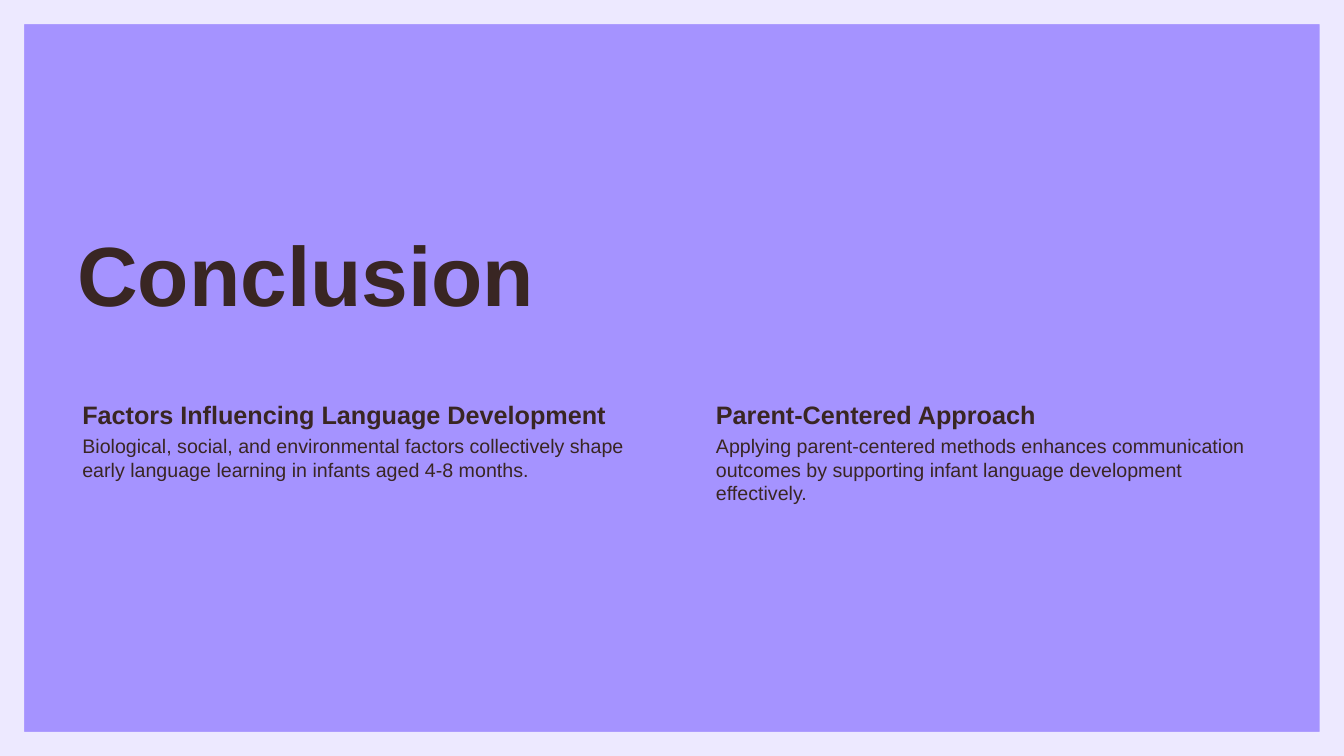
from dataclasses import dataclass

from pptx import Presentation
from pptx.dml.color import RGBColor
from pptx.enum.shapes import MSO_SHAPE
from pptx.enum.text import MSO_ANCHOR, PP_ALIGN
from pptx.slide import Slide
from pptx.util import Inches, Pt

WIDTH, HEIGHT = 13.33, 7.5
COLUMN, ROW = WIDTH / 14, HEIGHT / 21


@dataclass(frozen=True)
class Theme:
    font: str = "Arial"
    background: RGBColor = RGBColor(0xA5, 0x93, 0xFF)
    border: RGBColor = RGBColor(0xED, 0xE9, 0xFF)
    ink: RGBColor = RGBColor(0x39, 0x26, 0x23)
    title: int = 60
    heading: int = 18
    body: int = 14


@dataclass(frozen=True)
class TextStyle:
    size: int
    bold: bool
    insets: tuple[float, float, float, float]
    anchor: MSO_ANCHOR = MSO_ANCHOR.TOP
    line_spacing: float = 1.0


@dataclass(frozen=True)
class Area:
    column: float
    row: float
    columns: float
    rows: float


@dataclass(frozen=True)
class Takeaway:
    column: float
    heading: str
    body: str


THEME = Theme()
TITLE = TextStyle(THEME.title, True, (0.1, 0.05, 0.1, 0.05), MSO_ANCHOR.BOTTOM, 0.85)
HEADING = TextStyle(THEME.heading, True, (0.15, 0.03, 0.03, 0.03))
BODY = TextStyle(THEME.body, False, (0.15, 0.02, 0.02, 0.02))

TAKEAWAYS = [
    Takeaway(
        0.7,
        "Factors Influencing Language Development",
        "Biological, social, and environmental factors collectively shape "
        "early language learning in infants aged 4-8 months.",
    ),
    Takeaway(
        7.3,
        "Parent-Centered Approach",
        "Applying parent-centered methods enhances communication outcomes "
        "by supporting infant language development effectively.",
    ),
]


def add_border(s: Slide, share: float) -> None:
    sp = s.shapes.add_shape(MSO_SHAPE.FRAME, 0, 0, Inches(WIDTH), Inches(HEIGHT))
    sp.adjustments[0] = share
    sp.shadow.inherit = False
    sp.fill.solid()
    sp.fill.fore_color.rgb = THEME.border
    sp.line.fill.background()


def add_text(s: Slide, area: Area, text: str, style: TextStyle) -> None:
    sp = s.shapes.add_textbox(
        Inches(area.column * COLUMN),
        Inches(area.row * ROW),
        Inches(area.columns * COLUMN),
        Inches(area.rows * ROW),
    )
    tf = sp.text_frame
    tf.word_wrap = True
    tf.vertical_anchor = style.anchor
    tf.margin_left, tf.margin_top, tf.margin_right, tf.margin_bottom = map(Inches, style.insets)
    tf.text = text
    p = tf.paragraphs[0]
    p.alignment = PP_ALIGN.LEFT
    p.line_spacing = style.line_spacing
    font = p.runs[0].font
    font.name = THEME.font
    font.size = Pt(style.size)
    font.bold = style.bold
    font.color.rgb = THEME.ink


def add_takeaway(s: Slide, takeaway: Takeaway) -> None:
    add_text(s, Area(takeaway.column, 11, 6, 1), takeaway.heading, HEADING)
    add_text(s, Area(takeaway.column, 12, 6, 7.17), takeaway.body, BODY)


def main() -> None:
    prs = Presentation()
    prs.slide_width, prs.slide_height = Inches(WIDTH), Inches(HEIGHT)
    s = prs.slides.add_slide(prs.slide_layouts[6])
    s.background.fill.solid()
    s.background.fill.fore_color.rgb = THEME.background
    add_border(s, 0.032)
    add_text(s, Area(0.7, 5.66, 8.43, 3.47), "Conclusion", TITLE)
    for takeaway in TAKEAWAYS:
        add_takeaway(s, takeaway)
    prs.save("out.pptx")


if __name__ == "__main__":
    main()
